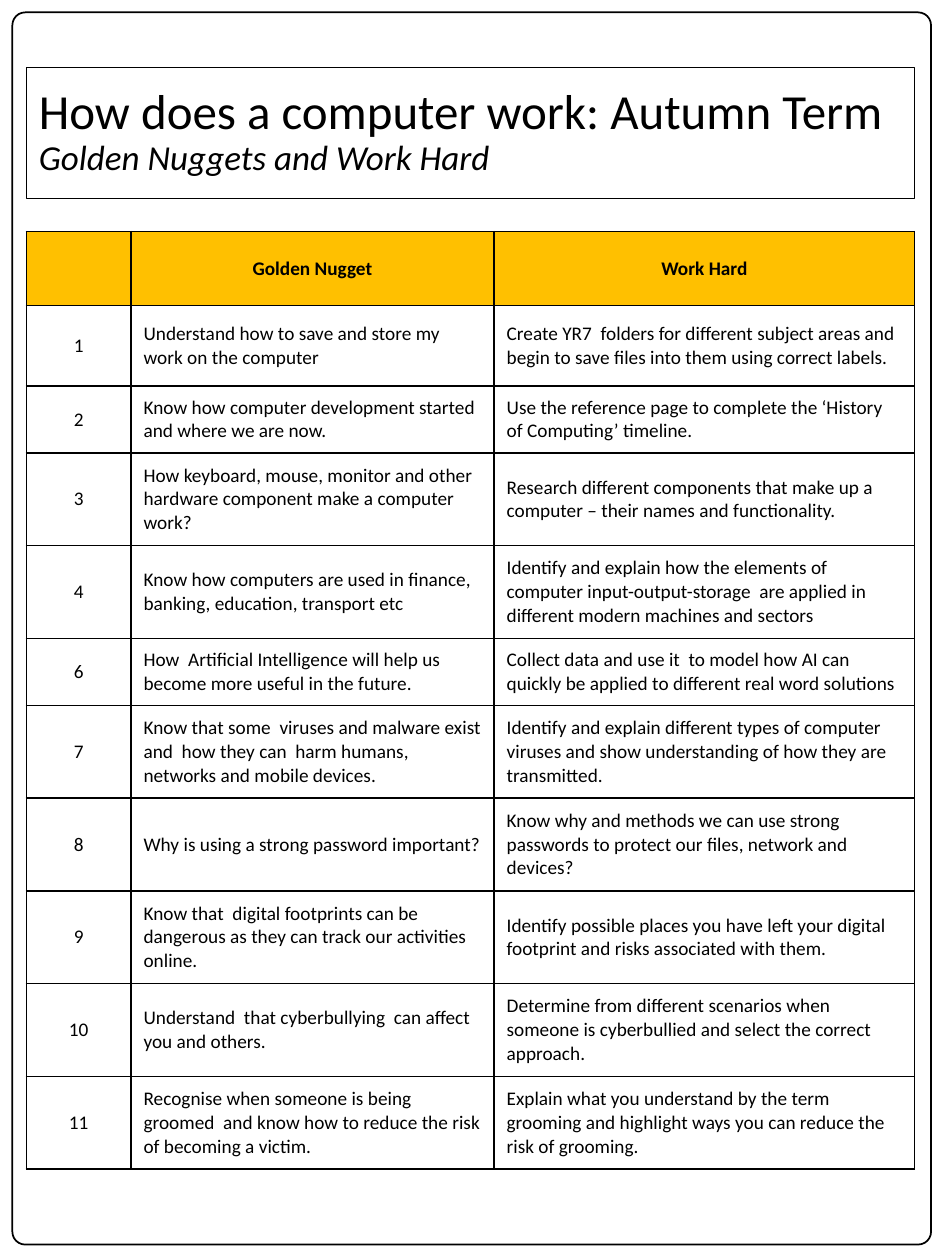
from lxml.etree import SubElement
from pptx import Presentation
from pptx.dml.color import RGBColor
from pptx.enum.shapes import MSO_SHAPE
from pptx.enum.text import MSO_ANCHOR, MSO_AUTO_SIZE, PP_ALIGN
from pptx.oxml.ns import qn
from pptx.util import Cm, Pt

COLOURS = {"ink": "000000", "header": "FFC000"}
FONT = "Calibri"
LEFT, WIDTH = 0.53, 17.91
COLUMN_WIDTHS = [2.11, 7.32, 8.48]
HEADER_HEIGHT, FIRST_HEIGHT, SHORT_HEIGHT, TALL_HEIGHT = 1.49, 1.62, 1.35, 1.87
ROW_HEIGHTS = [HEADER_HEIGHT, FIRST_HEIGHT, SHORT_HEIGHT, TALL_HEIGHT,
               TALL_HEIGHT, SHORT_HEIGHT] + [TALL_HEIGHT] * 5

ROWS = [
    ("", "Golden Nugget", "Work Hard"),
    ("1", "Understand how to save and store my work on the computer",
     "Create YR7  folders for different subject areas and begin to save files "
     "into them using correct labels."),
    ("2", "Know how computer development started and where we are now.",
     "Use the reference page to complete the ‘History of Computing’ timeline."),
    ("3", "How keyboard, mouse, monitor and other hardware component make a "
     "computer work?",
     "Research different components that make up a computer – their names and "
     "functionality."),
    ("4", "Know how computers are used in finance, banking, education, "
     "transport etc",
     "Identify and explain how the elements of computer input-output-storage  "
     "are applied in different modern machines and sectors"),
    ("6", "How  Artificial Intelligence will help us become more useful in the "
     "future.",
     "Collect data and use it  to model how AI can quickly be applied to "
     "different real word solutions"),
    ("7", "Know that some  viruses and malware exist and  how they can  harm "
     "humans, networks and mobile devices.",
     "Identify and explain different types of computer viruses and show "
     "understanding of how they are transmitted."),
    ("8", "Why is using a strong password important?",
     "Know why and methods we can use strong passwords to protect our files, "
     "network and devices?"),
    ("9", "Know that  digital footprints can be dangerous as they can track "
     "our activities online.",
     "Identify possible places you have left your digital footprint and risks "
     "associated with them."),
    ("10", "Understand  that cyberbullying  can affect you and others.",
     "Determine from different scenarios when someone is cyberbullied and "
     "select the correct approach."),
    ("11", "Recognise when someone is being groomed  and know how to reduce "
     "the risk of becoming a victim.",
     "Explain what you understand by the term grooming and highlight ways you "
     "can reduce the risk of grooming."),
]


def apply(target, values):
    for name, value in values.items():
        setattr(target, name, value)


class SlideBuilder:
    """Holds the colours, the font and the slide being filled."""

    def __init__(self, page, colours, font):
        self.page, self.colours, self.font = page, colours, font

    def colour(self, name):
        return RGBColor.from_string(self.colours[name])

    def span(self, para, text, **values):
        span = para.add_run()
        span.text = text
        apply(span.font, {"name": self.font, **values})
        span.font.color.rgb = self.colour("ink")

    def outline(self, shape, points):
        shape.fill.background()
        shape.line.color.rgb = self.colour("ink")
        shape.line.width = Pt(points)

    def title(self, heading, subheading, **place):
        box = self.page.shapes.title
        apply(box, place)
        self.outline(box, 0.75)
        frame = box.text_frame
        apply(frame, {"word_wrap": True, "auto_size": MSO_AUTO_SIZE.NONE,
                      "vertical_anchor": MSO_ANCHOR.MIDDLE})
        para = frame.paragraphs[0]
        apply(para, {"alignment": PP_ALIGN.LEFT, "line_spacing": 0.9})
        self.span(para, heading, size=Pt(28))
        para.add_line_break()
        self.span(para, subheading, size=Pt(20), italic=True)

    def borders(self, cell, points):
        properties = cell._tc.get_or_add_tcPr()
        for side in ("lnL", "lnR", "lnT", "lnB"):
            line = SubElement(properties, qn(f"a:{side}"), w=str(Pt(points)))
            fill = SubElement(line, qn("a:solidFill"))
            SubElement(fill, qn("a:srgbClr"), val=self.colours["ink"])

    def cell(self, cell, text, header, centred):
        cell.vertical_anchor = MSO_ANCHOR.MIDDLE
        self.borders(cell, 1)
        if header:
            cell.fill.solid()
            cell.fill.fore_color.rgb = self.colour("header")
        else:
            cell.fill.background()
        para = cell.text_frame.paragraphs[0]
        para.alignment = PP_ALIGN.CENTER if centred else PP_ALIGN.LEFT
        if text:
            self.span(para, text, size=Pt(11), bold=header)

    def table(self, rows, widths, heights, left, top):
        table = self.page.shapes.add_table(
            len(rows), len(widths), Cm(left), Cm(top),
            Cm(sum(widths)), Cm(sum(heights))).table
        table.horz_banding = False
        for column, width in zip(table.columns, widths):
            column.width = Cm(width)
        for r, (row, height) in enumerate(zip(rows, heights)):
            table.rows[r].height = Cm(height)
            for c, text in enumerate(row):
                self.cell(table.cell(r, c), text, r == 0, r == 0 or c == 0)

    def rounded_frame(self, left, top, width, height):
        frame = self.page.shapes.add_shape(
            MSO_SHAPE.ROUNDED_RECTANGLE, Cm(left), Cm(top), Cm(width), Cm(height))
        frame.adjustments[0] = 0.014
        frame.shadow.inherit = False
        self.outline(frame, 1)


def main():
    deck = Presentation()
    apply(deck, {"slide_width": Cm(19.05), "slide_height": Cm(25.4)})
    page = deck.slides.add_slide(deck.slide_layouts.get_by_name("Title Only"))
    builder = SlideBuilder(page, COLOURS, FONT)
    builder.title("How does a computer work: Autumn Term",
                  "Golden Nuggets and Work Hard",
                  left=Cm(LEFT), top=Cm(1.36), width=Cm(WIDTH), height=Cm(2.64))
    builder.table(ROWS, COLUMN_WIDTHS, ROW_HEIGHTS, LEFT, 4.67)
    builder.rounded_frame(0.25, 0.25, 18.52, 24.84)
    deck.save("out.pptx")


if __name__ == "__main__":
    main()
